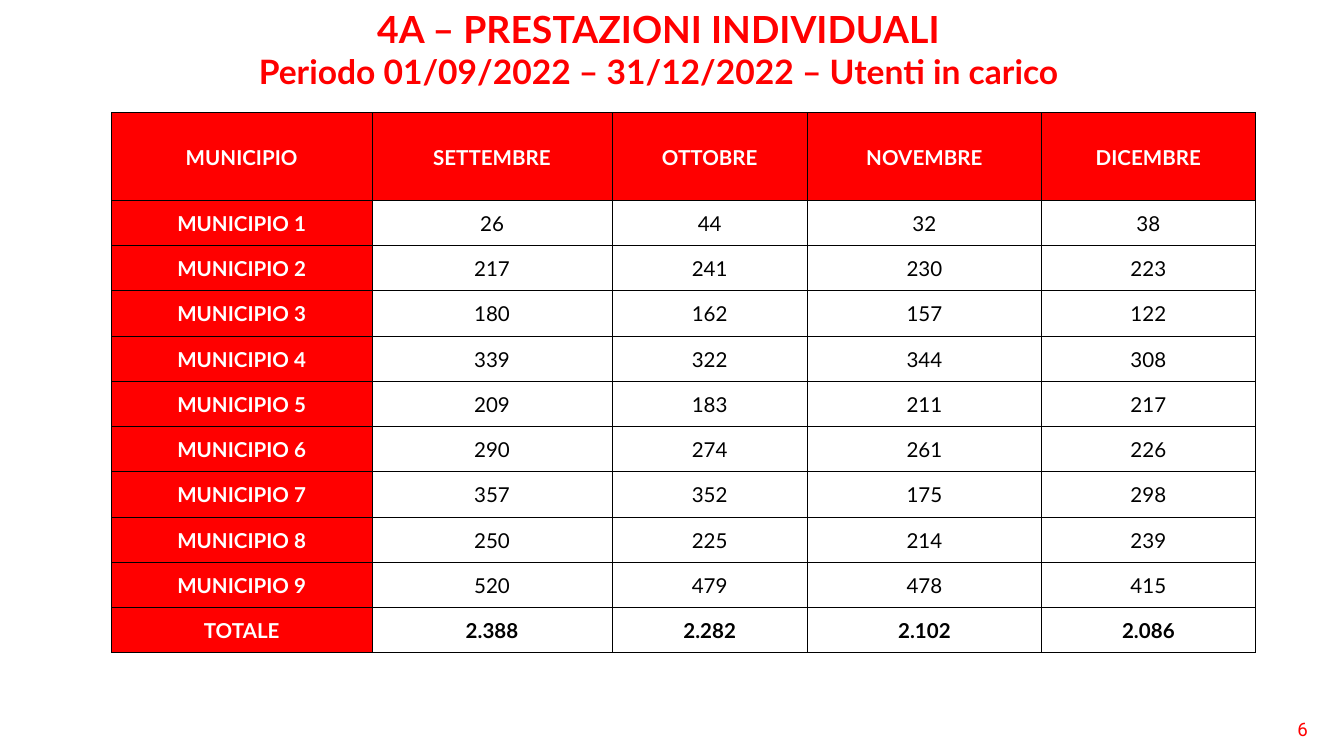
import pptx
import pptx.dml.color
import pptx.enum.text
import pptx.oxml
import pptx.oxml.ns
import pptx.util

Pt = pptx.util.Pt
RGBColor = pptx.dml.color.RGBColor
CENTER = pptx.enum.text.PP_ALIGN.CENTER
LEFT = pptx.enum.text.PP_ALIGN.LEFT

RED = RGBColor(0xFF, 0x00, 0x00)
WHITE = RGBColor(0xFF, 0xFF, 0xFF)
BLACK = RGBColor(0x00, 0x00, 0x00)

HEADINGS = ["MUNICIPIO", "SETTEMBRE", "OTTOBRE", "NOVEMBRE", "DICEMBRE"]
USERS = [
    [26, 44, 32, 38],
    [217, 241, 230, 223],
    [180, 162, 157, 122],
    [339, 322, 344, 308],
    [209, 183, 211, 217],
    [290, 274, 261, 226],
    [357, 352, 175, 298],
    [250, 225, 214, 239],
    [520, 479, 478, 415],
]
TOTALS = ["2.388", "2.282", "2.102", "2.086"]
COLUMN_WIDTHS = [139.5, 128.75, 104.5, 125.5, 114.5]
HEADING_HEIGHT, ROW_HEIGHT = 46.8, 24.26


class SlideBuilder:
    font_name = "Lato"
    border_width = 0.5
    cell_inset = 0.7

    def __init__(self, slide):
        self.slide = slide

    def style(self, paragraph, size, color, bold=False, font_name=None, align=CENTER):
        paragraph.alignment = align
        paragraph.font.name = font_name or self.font_name
        paragraph.font.size = Pt(size)
        paragraph.font.bold = bold
        paragraph.font.color.rgb = color

    def text(self, left, top, width, height, lines, inset_left=7.2, **style):
        """Add a text box; lines are (text, size) pairs."""
        shape = self.slide.shapes.add_textbox(Pt(left), Pt(top), Pt(width), Pt(height))
        frame = shape.text_frame
        frame.word_wrap = True
        frame.margin_left = Pt(inset_left)
        frame.text = "\n".join(text for text, size in lines)
        for paragraph, (text, size) in zip(frame.paragraphs, lines):
            self.style(paragraph, size, RED, **style)

    def borders(self, cell):
        properties = cell._tc.get_or_add_tcPr()
        for side in ("lnL", "lnR", "lnT", "lnB"):
            properties.append(pptx.oxml.parse_xml(
                f'<a:{side} {pptx.oxml.ns.nsdecls("a")} w="{Pt(self.border_width)}">'
                f'<a:solidFill><a:srgbClr val="{BLACK}"/></a:solidFill></a:{side}>'))

    def cell(self, cell, text, bold, is_label):
        cell.text = text
        cell.vertical_anchor = pptx.enum.text.MSO_ANCHOR.MIDDLE
        cell.margin_left = cell.margin_right = cell.margin_top = Pt(self.cell_inset)
        cell.margin_bottom = 0
        self.borders(cell)
        if is_label:
            cell.fill.solid()
            cell.fill.fore_color.rgb = RED
        else:
            cell.fill.background()
        self.style(cell.text_frame.paragraphs[0], 11, WHITE if is_label else BLACK, bold)

    def table(self, left, top, rows, widths, heights):
        table = self.slide.shapes.add_table(
            len(rows), len(widths), Pt(left), Pt(top),
            Pt(sum(widths)), Pt(sum(heights))).table
        table.first_row = table.horz_banding = False
        for column, width in zip(table.columns, widths):
            column.width = Pt(width)
        for row, height in zip(table.rows, heights):
            row.height = Pt(height)
        last = len(rows) - 1
        for r, values in enumerate(rows):
            for c, value in enumerate(values):
                is_label = r == 0 or c == 0
                self.cell(table.cell(r, c), str(value), is_label or r == last, is_label)


def main():
    presentation = pptx.Presentation()
    presentation.slide_width, presentation.slide_height = Pt(720), Pt(405)
    builder = SlideBuilder(presentation.slides.add_slide(presentation.slide_layouts[6]))

    # Slide number
    builder.text(680.4, 380.9, 38.2, 19.4, [("6", 10)], inset_left=14.6,
                 font_name="Roboto", align=LEFT)

    # Title
    builder.text(42.5, 0, 620.6, 53.3, [
        ("4A – PRESTAZIONI INDIVIDUALI", 20),
        ("Periodo 01/09/2022 – 31/12/2022 – Utenti in carico", 18),
    ], bold=True)

    # Users per municipality and month
    rows = [HEADINGS]
    rows += [[f"MUNICIPIO {n}", *values] for n, values in enumerate(USERS, 1)]
    rows.append(["TOTALE", *TOTALS])
    heights = [HEADING_HEIGHT] + [ROW_HEIGHT] * (len(rows) - 1)
    builder.table(59.75, 60.5, rows, COLUMN_WIDTHS, heights)

    presentation.save("out.pptx")


if __name__ == "__main__":
    main()
